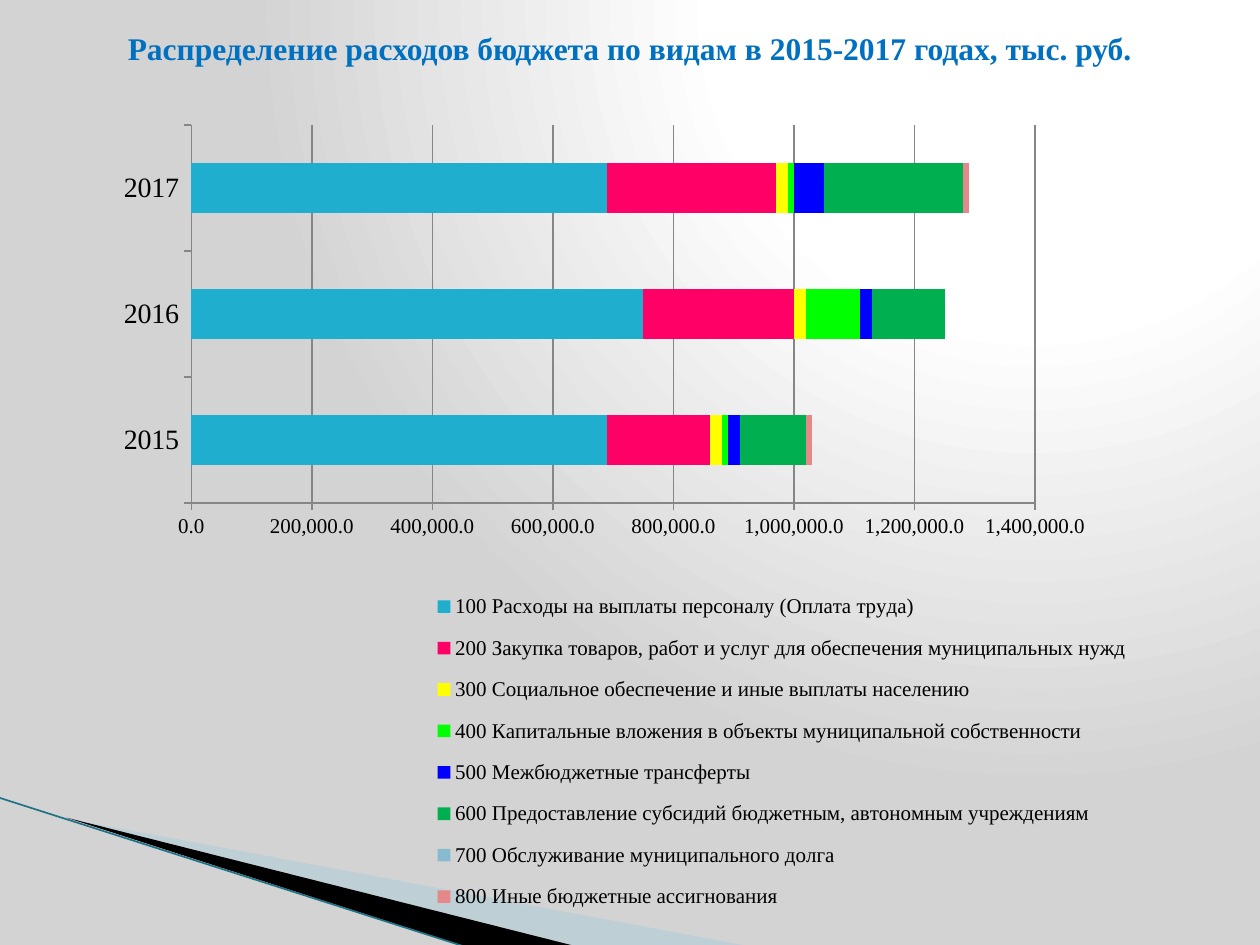
from lxml import etree
from pptx import Presentation
from pptx.chart.data import CategoryChartData
from pptx.dml.color import RGBColor
from pptx.enum.chart import XL_CHART_TYPE as ChartType, XL_LEGEND_POSITION as LegendPos
from pptx.enum.chart import XL_TICK_MARK as Tick
from pptx.enum.shapes import MSO_CONNECTOR as Connector
from pptx.enum.text import MSO_ANCHOR as Anchor, MSO_AUTO_SIZE as AutoSize, PP_ALIGN as Align
from pptx.oxml import parse_xml
from pptx.oxml.ns import nsdecls, qn
from pptx.util import Inches, Pt

FONT = "Times New Roman"
BASE_FONT = "DejaVu Sans Mono"
BLACK = RGBColor(0x00, 0x00, 0x00)
TITLE_BLUE = RGBColor(0x00, 0x70, 0xC0)
BAND_BLUE = RGBColor(0xA0, 0xCB, 0xDC)
EDGE_TEAL = RGBColor(0x1F, 0x73, 0x87)
AXIS_GREY = RGBColor(0x86, 0x86, 0x86)

YEARS = ["2015", "2016", "2017"]
# Name, values by year, colour
EXPENSES = [
    ("100 Расходы на выплаты персоналу (Оплата труда)",
     (690000, 750000, 690000), RGBColor(0x1F, 0xAE, 0xCD)),
    ("200 Закупка товаров, работ и услуг для обеспечения муниципальных нужд",
     (170000, 250000, 280000), RGBColor(0xFF, 0x00, 0x66)),
    ("300 Социальное обеспечение и иные выплаты населению",
     (20000, 20000, 20000), RGBColor(0xFF, 0xFF, 0x00)),
    ("400 Капитальные вложения в объекты муниципальной собственности",
     (10000, 90000, 10000), RGBColor(0x00, 0xFF, 0x00)),
    ("500 Межбюджетные трансферты",
     (20000, 20000, 50000), RGBColor(0x00, 0x00, 0xFF)),
    ("600 Предоставление субсидий бюджетным, автономным учреждениям",
     (110000, 120000, 230000), RGBColor(0x00, 0xB0, 0x50)),
    ("700 Обслуживание муниципального долга",
     (0, 0, 0), RGBColor(0x89, 0xBB, 0xD0)),
    ("800 Иные бюджетные ассигнования",
     (10000, 0, 10000), RGBColor(0xE5, 0x88, 0x89)),
]


def set_font(font, size, name=FONT, color=BLACK, bold=False):
    font.size, font.name, font.bold = Pt(size), name, bold
    font.color.rgb = color


def add_background(s):
    stops = "".join(
        f'<a:gs pos="{pos * 1000}"><a:srgbClr val="{color}"/></a:gs>'
        for pos, color in ((0, "FFFFFF"), (40, "FFFFFF"), (100, "D3D3D3")))
    s._element.cSld.insert(0, parse_xml(
        f'<p:bg {nsdecls("p", "a")}><p:bgPr><a:gradFill rotWithShape="1">'
        f'<a:gsLst>{stops}</a:gsLst><a:path path="circle">'
        '<a:fillToRect l="65000" t="0" r="0" b="98000"/></a:path>'
        '</a:gradFill><a:effectLst/></p:bgPr></p:bg>'))


def add_band(s, points, color, opacity=100):
    # Points are in hundredths of an inch
    builder = s.shapes.build_freeform(*points[0], scale=Inches(0.01))
    builder.add_line_segments(points[1:], close=True)
    band = builder.convert_to_shape()
    band.shadow.inherit = False
    band.fill.solid()
    band.fill.fore_color.rgb = color
    band.line.fill.background()
    if opacity < 100:
        clr = band._element.spPr.find(qn("a:solidFill")).find(qn("a:srgbClr"))
        etree.SubElement(clr, qn("a:alpha")).set("val", str(opacity * 1000))


def add_corner(s):
    add_band(s, [(55, 650), (595, 751), (456, 751)], BAND_BLUE, 40)
    add_band(s, [(53, 649), (457, 751), (372, 752)], BLACK)
    edge = s.shapes.add_connector(
        Connector.STRAIGHT, Inches(-0.01), Inches(6.33), Inches(3.71), Inches(7.52))
    edge.line.color.rgb = EDGE_TEAL
    edge.line.width = Pt(0.95)
    etree.SubElement(edge._element.spPr, qn("a:effectLst"))


def place_title(s, box, text):
    title = s.shapes.title
    title.left, title.top, title.width, title.height = map(Inches, box)
    tf = title.text_frame
    tf.auto_size = AutoSize.NONE
    tf.word_wrap = True
    tf.vertical_anchor = Anchor.MIDDLE
    p = tf.paragraphs[0]
    p.alignment = Align.CENTER
    r = p.add_run()
    r.text = text
    set_font(r.font, 18, color=TITLE_BLUE, bold=True)
    # The closing line break has the size of the text
    p.add_line_break()
    line_break = p._p.find(qn("a:br"))
    etree.SubElement(line_break, qn("a:rPr")).set("sz", "1800")
    etree.SubElement(p._p, qn("a:endParaRPr")).set("sz", "1800")


def make_layout(x, y, w, h, inner=False):
    """Place a chart part, in percent of the chart."""
    target = '<c:layoutTarget val="inner"/>' if inner else ""
    shares = "".join(f'<c:{key} val="{value / 100:.3f}"/>'
                     for key, value in zip("xywh", (x, y, w, h)))
    return parse_xml(
        f'<c:layout {nsdecls("c")}><c:manualLayout>{target}'
        f'<c:xMode val="edge"/><c:yMode val="edge"/>{shares}'
        '</c:manualLayout></c:layout>')


def style_axis(axis, size):
    axis.major_tick_mark, axis.minor_tick_mark = Tick.OUTSIDE, Tick.NONE
    axis.format.line.color.rgb = AXIS_GREY
    set_font(axis.tick_labels.font, size)


def add_expense_chart(s, box):
    data = CategoryChartData(number_format="#,##0.0")
    data.categories = YEARS
    for name, values, _ in EXPENSES:
        data.add_series(name, values)
    chart = s.shapes.add_chart(
        ChartType.BAR_STACKED, *map(Inches, box), data).chart
    chart.has_title = False
    set_font(chart.font, 18, BASE_FONT)

    # Bars
    plot = chart.plots[0]
    plot.vary_by_categories = False
    plot.gap_width, plot.overlap = 150, 100
    for series, (_, _, color) in zip(plot.series, EXPENSES):
        series.format.fill.solid()
        series.format.fill.fore_color.rgb = color

    # Axes
    style_axis(chart.category_axis, 16)
    values_axis = chart.value_axis
    style_axis(values_axis, 12)
    values_axis.minimum_scale, values_axis.maximum_scale = 0, 1400000
    values_axis.major_unit = 200000
    values_axis.has_major_gridlines = True
    values_axis.major_gridlines.format.line.color.rgb = AXIS_GREY
    values_axis.tick_labels.number_format = "#,##0.0"
    values_axis.tick_labels.number_format_is_linked = False

    # Legend below the bars
    chart.has_legend = True
    legend = chart.legend
    legend.position = LegendPos.RIGHT
    legend.include_in_layout = False
    set_font(legend.font, 12)

    # Manual placement of the bars and the legend
    areas = ((chart._chartSpace.chart.plotArea, 0,
              make_layout(12.1, 3.4, 74.4, 43.8, inner=True)),
             (legend._element, 1, make_layout(32.7, 55.7, 63, 40.6)))
    for area, index, layout in areas:
        for old in area.findall(qn("c:layout")):
            area.remove(old)
        area.insert(index, layout)


def main():
    prs = Presentation()
    prs.slide_width, prs.slide_height = Inches(10), Inches(7.5)
    s = prs.slides.add_slide(prs.slide_layouts[5])
    add_background(s)
    add_corner(s)
    add_expense_chart(s, (0.43, 0.76, 9, 6.85))
    place_title(s, (0.5, 0.3, 9, 0.46),
                "Распределение расходов бюджета по видам в 2015-2017 годах, тыс. руб.")
    prs.save("out.pptx")


if __name__ == "__main__":
    main()
